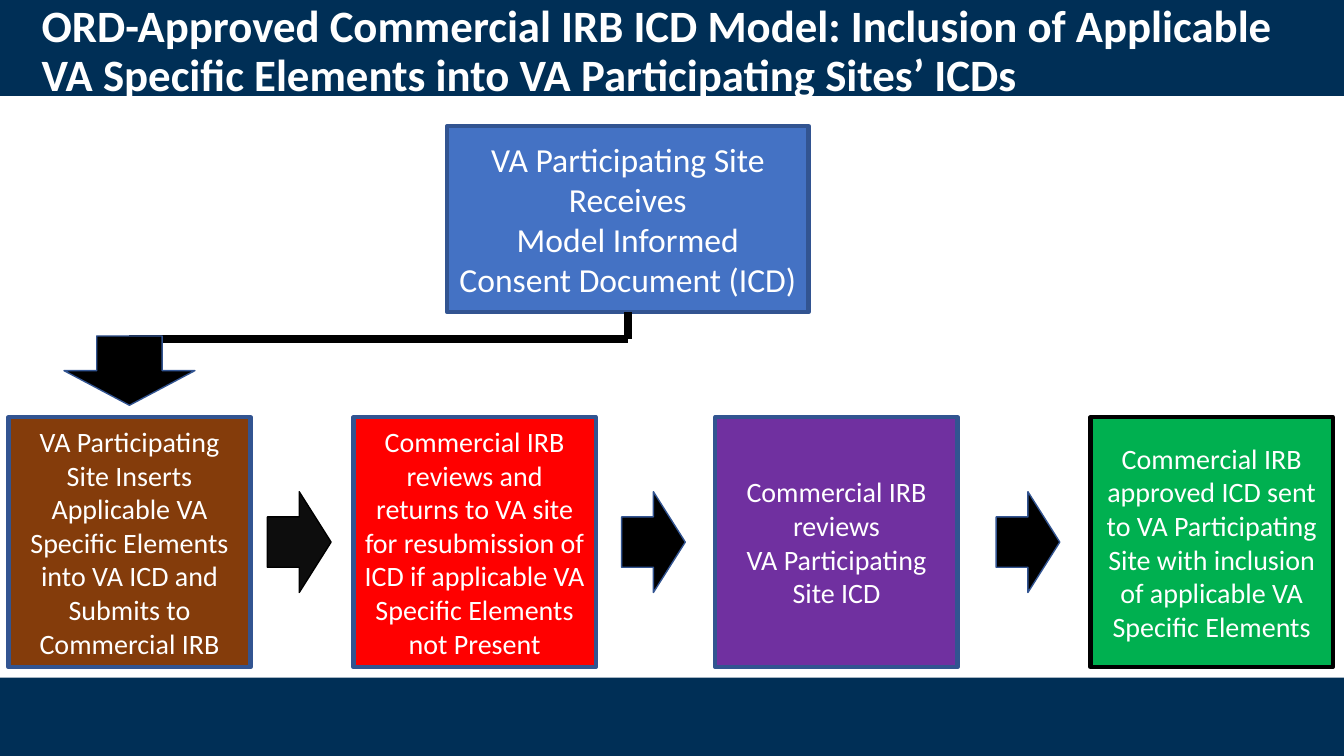
from pptx import Presentation
from pptx.dml.color import RGBColor
from pptx.enum.shapes import MSO_CONNECTOR, MSO_SHAPE
from pptx.enum.text import MSO_ANCHOR, MSO_AUTO_SIZE, PP_ALIGN
from pptx.oxml.ns import qn
from pptx.util import Pt
from lxml.etree import SubElement

WHITE = RGBColor(0xFF, 0xFF, 0xFF)
BLACK = RGBColor(0x00, 0x00, 0x00)
SOFT_BLACK = RGBColor(0x0D, 0x0D, 0x0D)
NAVY = RGBColor(0x00, 0x2F, 0x56)
BLUE = RGBColor(0x44, 0x72, 0xC4)
EDGE = RGBColor(0x32, 0x54, 0x91)
BROWN = RGBColor(0x84, 0x3C, 0x0B)
RED = RGBColor(0xFF, 0x00, 0x00)
PURPLE = RGBColor(0x70, 0x30, 0xA0)
GREEN = RGBColor(0x00, 0xB0, 0x50)
FONT = "Calibri"
SLIDE_W, SLIDE_H = 960, 540

TITLE = ("ORD-Approved Commercial IRB ICD Model: Inclusion of Applicable "
         "VA Specific Elements into VA Participating Sites’ ICDs")
START = "VA Participating Site Receives\nModel Informed Consent Document (ICD)"
STEPS = [
    (6, BROWN, EDGE, "VA Participating Site Inserts Applicable VA Specific "
     "Elements into VA ICD and Submits to Commercial IRB"),
    (252.5, RED, EDGE, "Commercial IRB reviews and returns to VA site for "
     "resubmission of ICD if applicable VA Specific Elements not Present"),
    (511, PURPLE, EDGE, "Commercial IRB reviews\nVA Participating Site ICD"),
    (779, GREEN, BLACK, "Commercial IRB approved ICD sent to VA Participating "
     "Site with inclusion of applicable VA Specific Elements"),
]
ARROWS = [(191, SOFT_BLACK, BLACK), (444, BLACK, EDGE), (711.5, BLACK, EDGE)]


def add_block(s, kind, box, fill, edge=None, weight=1):
    """Add a filled preset shape, outlined when an edge colour is given."""
    sp = s.shapes.add_shape(kind, *[Pt(v) for v in box])
    sp.shadow.inherit = False
    sp.fill.solid()
    sp.fill.fore_color.rgb = fill
    if edge is None:
        sp.line.fill.background()
    else:
        sp.line.color.rgb = edge
        sp.line.width = Pt(weight)
    return sp


def format_text(tf, size, align, bold=False):
    """Apply the slide's white type to every paragraph of a frame."""
    tf.word_wrap = True
    tf.auto_size = MSO_AUTO_SIZE.NONE
    tf.vertical_anchor = MSO_ANCHOR.MIDDLE
    for p in tf.paragraphs:
        p.alignment = align
        for r in p.runs:
            r.font.name = FONT
            r.font.size = Pt(size)
            r.font.bold = bold
            r.font.color.rgb = WHITE


def add_step(s, box, fill, edge, text, size):
    """Add one process box with centred text."""
    sp = add_block(s, MSO_SHAPE.RECTANGLE, box, fill, edge, 3)
    sp.text_frame.text = text
    format_text(sp.text_frame, size, PP_ALIGN.CENTER)


def add_line(s, x1, y1, x2, y2):
    """Add a thick black connector."""
    ln = s.shapes.add_connector(MSO_CONNECTOR.STRAIGHT, Pt(x1), Pt(y1), Pt(x2), Pt(y2))
    ln.line.color.rgb = BLACK
    ln.line.width = Pt(5.75)
    SubElement(ln._element.spPr, qn("a:effectLst"))


def add_bands(s, header_h, footer_y):
    """Add the navy header and footer bands across the slide."""
    for y, h in ((0, header_h), (footer_y, SLIDE_H - footer_y)):
        add_block(s, MSO_SHAPE.RECTANGLE, (0, y, SLIDE_W, h), NAVY)


def add_title(s, x, y, w, h):
    """Place the title placeholder in front of the header band."""
    sp = s.shapes.title
    s.shapes._spTree.append(sp._element)
    sp.left, sp.top, sp.width, sp.height = Pt(x), Pt(y), Pt(w), Pt(h)
    sp.text_frame.text = TITLE
    sp.text_frame.paragraphs[0].line_spacing = 0.9
    format_text(sp.text_frame, 32, PP_ALIGN.LEFT, True)


def add_start(s, x, y, w, h, target_x, target_y):
    """Add the starting box and its elbow route down to the first step."""
    add_step(s, (x, y, w, h), BLUE, EDGE, START, 24)
    mid, bottom, turn = x + w / 2, y + h, y + h + 19
    add_line(s, mid, bottom, mid, turn)
    add_line(s, mid, turn, target_x, turn)
    arrow_w, arrow_h = 93.5, 49.5
    box = (target_x - arrow_w / 2, target_y - arrow_h, arrow_w, arrow_h)
    add_block(s, MSO_SHAPE.DOWN_ARROW, box, BLACK, EDGE)


def add_process(s, y, w, h):
    """Add the row of steps and the arrows centred on its height."""
    for x, fill, edge, text in STEPS:
        add_step(s, (x, y, w, h), fill, edge, text, 20)
    arrow_w, arrow_h = 45.5, 72
    for x, fill, edge in ARROWS:
        box = (x, y + (h - arrow_h) / 2, arrow_w, arrow_h)
        add_block(s, MSO_SHAPE.RIGHT_ARROW, box, fill, edge)


def main():
    """Build the slide and save it."""
    prs = Presentation()
    prs.slide_width, prs.slide_height = Pt(SLIDE_W), Pt(SLIDE_H)
    s = prs.slides.add_slide(prs.slide_layouts[5])
    add_bands(s, 68.5, 484)
    add_title(s, 22.5, 13, 930, 49)
    add_start(s, 319.5, 90, 258, 133, 92.5, 289.5)
    add_process(s, 298, 173, 178.5)
    prs.save("out.pptx")


if __name__ == "__main__":
    main()
